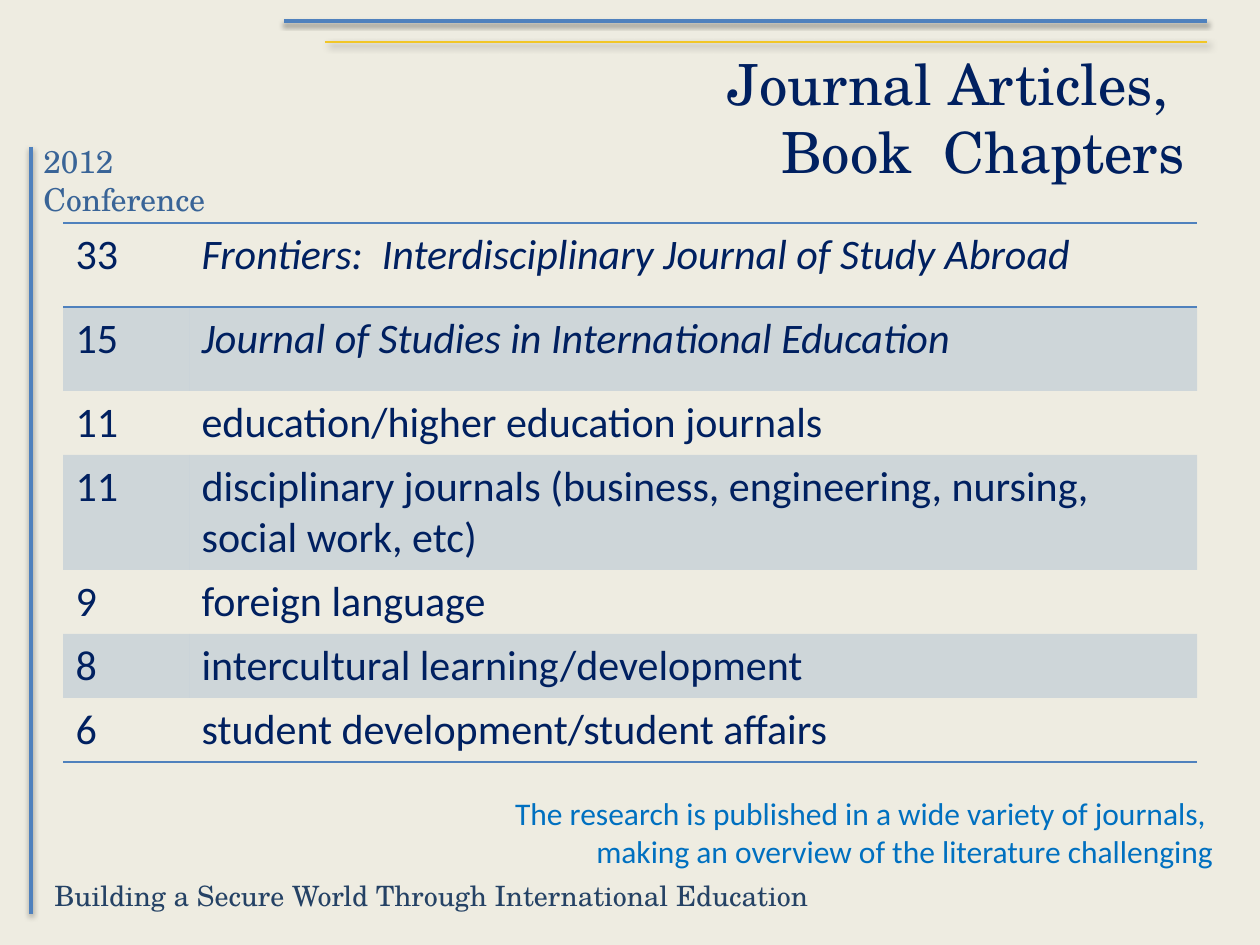
"""Build the slide on journal articles and book chapters."""
from lxml.etree import SubElement
from pptx import Presentation
from pptx.dml.color import RGBColor
from pptx.enum.text import MSO_ANCHOR, MSO_AUTO_SIZE, PP_ALIGN
from pptx.enum.shapes import MSO_CONNECTOR
from pptx.oxml import parse_xml
from pptx.oxml.ns import nsdecls, qn
from pptx.util import Emu, Pt

CREAM = RGBColor(0xEE, 0xEC, 0xE1)
BLUE = RGBColor(0x4F, 0x81, 0xBD)
GOLD = RGBColor(0xF1, 0xC6, 0x27)
NAVY = RGBColor(0x00, 0x20, 0x60)
STEEL = RGBColor(0x39, 0x64, 0x97)
SLATE = RGBColor(0x25, 0x42, 0x65)
BRIGHT = RGBColor(0x00, 0x70, 0xC0)
SERIF, SANS = "TeX Gyre Schola", "Calibri"
NO_STYLE = "{2D5ABB26-0587-4C30-8999-92F81FD0307C}"


def px(*lengths):
    return [Emu(round(length * 914400 / 126)) for length in lengths]


def write(frame, text, size, color, font=SANS, align=PP_ALIGN.LEFT, italic=False, wrap=True):
    frame.text = text
    frame.word_wrap = wrap
    for paragraph in frame.paragraphs:
        paragraph.alignment = align
        paragraph.font.size = Pt(size)
        paragraph.font.name = font
        paragraph.font.italic = italic
        paragraph.font.color.rgb = color


presentation = Presentation()
presentation.slide_width, presentation.slide_height = px(1260, 945)
slide = presentation.slides.add_slide(presentation.slide_layouts[5])
slide.background.fill.solid()
slide.background.fill.fore_color.rgb = CREAM

rules = [
    ((31, 147, 31, 914), BLUE, 2, (3.1, 1.6, 90, 38)),
    ((1207, 21, 284, 21), BLUE, 2, (3.1, 1.6, 90, 38)),
    ((1207, 42, 325, 42), GOLD, 1.5, (4, 3, 45, 40)),
]
for ends, color, width, (blur, distance, angle, opacity) in rules:
    connector = slide.shapes.add_connector(MSO_CONNECTOR.STRAIGHT, *px(*ends))
    connector.line.color.rgb = color
    connector.line.width = Pt(width)
    connector._element.spPr.append(parse_xml(
        f'<a:effectLst {nsdecls("a")}><a:outerShdw blurRad="{Pt(blur)}" dist="{Pt(distance)}" '
        f'dir="{angle * 60000}" rotWithShape="0"><a:srgbClr val="000000">'
        f'<a:alpha val="{opacity * 1000}"/></a:srgbClr></a:outerShdw></a:effectLst>'))

labels = [
    ((31, 136, 262, 50), "2012 Conference", dict(size=18, color=STEEL, font=SERIF)),
    ((42, 872, 1018, 47), "Building a Secure World Through International Education",
     dict(size=16, color=SLATE, font=SERIF)),
    ((494, 788, 732, 89), "The research is published in a wide variety of journals, \n"
     "making an overview of the literature challenging",
     dict(size=18, color=BRIGHT, align=PP_ALIGN.RIGHT, wrap=False)),
]
for box, text, style in labels:
    write(slide.shapes.add_textbox(*px(*box)).text_frame, text, **style)

title = slide.shapes.title
title.left, title.top, title.width, title.height = px(63, 38, 1134, 158)
write(title.text_frame, "Journal Articles, \vBook  Chapters", 32.4, NAVY, SERIF, PP_ALIGN.RIGHT)
title.text_frame.auto_size = MSO_AUTO_SIZE.NONE
title.text_frame.vertical_anchor = MSO_ANCHOR.MIDDLE

rows = [
    (84, "33", "Frontiers:  Interdisciplinary Journal of Study Abroad"),
    (84, "15", "Journal of Studies in International Education"),
    (64, "11", "education/higher education journals"),
    (115, "11", "disciplinary journals (business, engineering, nursing, social work, etc)"),
    (64, "9", "foreign language"),
    (64, "8", "intercultural learning/development"),
    (64, "6", "student development/student affairs"),
]
borders = {0: ("lnT", "lnB"), len(rows) - 1: ("lnB",)}
table_height = sum(height for height, *_ in rows)
table = slide.shapes.add_table(len(rows), 2, *px(63, 223, 1134, table_height)).table
table._tbl.tblPr.find(qn("a:tableStyleId")).text = NO_STYLE
table.first_row = table.horz_banding = False
table.columns[0].width, table.columns[1].width = px(126, 1008)
for row, (height, *texts) in enumerate(rows):
    table.rows[row].height = px(height)[0]
    for column, text in enumerate(texts):
        cell = table.cell(row, column)
        write(cell.text_frame, text, 24, NAVY, italic=column == 1 and row < 2)
        properties = cell._tc.get_or_add_tcPr()
        for side in borders.get(row, ()):
            properties.append(parse_xml(
                f'<a:{side} {nsdecls("a")} w="{Pt(1)}"><a:solidFill>'
                f'<a:srgbClr val="{BLUE}"/></a:solidFill></a:{side}>'))
        if row % 2:
            cell.fill.solid()
            cell.fill.fore_color.rgb = BLUE
            SubElement(properties.find(".//" + qn("a:srgbClr")), qn("a:alpha")).set("val", "20000")
        else:
            cell.fill.background()

presentation.save("out.pptx")
